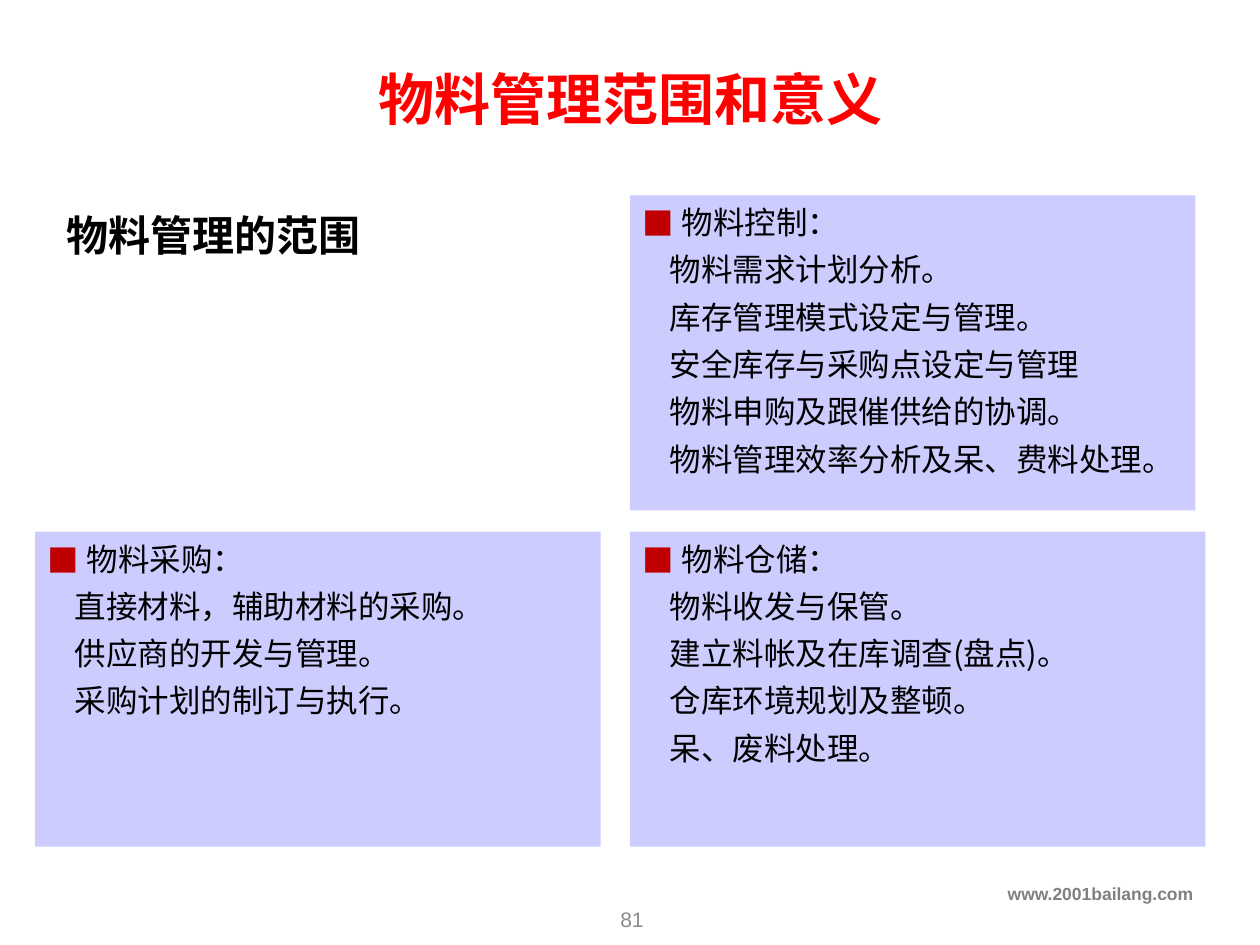
from lxml.etree import SubElement
from pptx import Presentation
from pptx.dml.color import RGBColor
from pptx.enum.shapes import MSO_SHAPE
from pptx.enum.text import MSO_ANCHOR, PP_ALIGN
from pptx.oxml.ns import qn
from pptx.util import Cm, Pt

RED = RGBColor(0xFF, 0x00, 0x00)
DARK_RED = RGBColor(0xC0, 0x00, 0x00)
LAVENDER = RGBColor(0xCC, 0xCC, 0xFF)
BLACK = RGBColor(0x00, 0x00, 0x00)
GRAY = RGBColor(0x80, 0x80, 0x80)
LIGHT_GRAY = RGBColor(0x8C, 0x8C, 0x8C)
LATIN, CJK = "Arial", "Noto Sans CJK SC"


class SlideBuilder:
    def __init__(self, slide):
        self.slide = slide

    def style(self, paragraph, size, color, font=CJK, bold=False):
        paragraph.font.size = Pt(size)
        paragraph.font.name = font
        paragraph.font.bold = bold
        paragraph.font.color.rgb = color
        for run in paragraph.runs:
            SubElement(run._r.get_or_add_rPr(), qn("a:ea"), typeface=CJK)

    def label(self, text, left, top, width, height, size, color, font=LATIN,
              bold=False, align=PP_ALIGN.LEFT, anchor=MSO_ANCHOR.MIDDLE):
        box = self.slide.shapes.add_textbox(Cm(left), Cm(top), Cm(width), Cm(height))
        frame = box.text_frame
        frame.word_wrap = True
        frame.vertical_anchor = anchor
        paragraph = frame.paragraphs[0]
        paragraph.text = text
        paragraph.alignment = align
        self.style(paragraph, size, color, font, bold)

    def indent(self, paragraph, left, first=0.0):
        properties = paragraph._p.get_or_add_pPr()
        properties.set("marL", str(Cm(left)))
        properties.set("indent", str(Cm(first)))
        return properties

    def bullet(self, paragraph):
        properties = self.indent(paragraph, 0.79, -0.79)
        color = SubElement(properties, qn("a:buClr"))
        SubElement(color, qn("a:srgbClr"), val=str(DARK_RED))
        SubElement(properties, qn("a:buFont"), typeface=CJK)
        SubElement(properties, qn("a:buChar"), char="■")

    def panel(self, heading, items, left, top, width, height=6.35):
        box = self.slide.shapes.add_shape(
            MSO_SHAPE.RECTANGLE, Cm(left), Cm(top), Cm(width), Cm(height))
        box.shadow.inherit = False
        box.fill.solid()
        box.fill.fore_color.rgb = LAVENDER
        box.line.fill.background()
        frame = box.text_frame
        frame.word_wrap = True
        frame.vertical_anchor = MSO_ANCHOR.TOP
        for row, text in enumerate([heading, *items]):
            paragraph = frame.add_paragraph() if row else frame.paragraphs[0]
            paragraph.text = text
            paragraph.alignment = PP_ALIGN.LEFT
            paragraph.line_spacing = Pt(22.5)
            if row:
                paragraph.space_before = Pt(4.5)
                self.indent(paragraph, 0.55)
            else:
                self.bullet(paragraph)
            self.style(paragraph, 18, BLACK)


def main():
    deck = Presentation()
    deck.slide_width, deck.slide_height = Cm(25.4), Cm(19.05)
    builder = SlideBuilder(deck.slides.add_slide(deck.slide_layouts[6]))

    # Footer
    builder.label("www.2001bailang.com", 0, 17.68, 24.3, 0.89, 10, GRAY, bold=True,
                  align=PP_ALIGN.RIGHT, anchor=MSO_ANCHOR.TOP)
    builder.label("81", 9.88, 18.01, 5.72, 1.02, 12, LIGHT_GRAY,
                  align=PP_ALIGN.CENTER)

    # Title and section heading
    builder.label("物料管理范围和意义", 7.11, 1.27, 11.2, 1.4, 32, RED, bold=True,
                  align=PP_ALIGN.CENTER)
    builder.label("物料管理的范围", 1.09, 3.94, 10.03, 1.6, 24, BLACK, CJK, bold=True)

    # Panels for the three areas
    left_column, right_column = 0.71, 12.7
    upper_row, lower_row = 3.94, 10.72
    builder.panel("物料控制：", [
        "物料需求计划分析。",
        "库存管理模式设定与管理。",
        "安全库存与采购点设定与管理",
        "物料申购及跟催供给的协调。",
        "物料管理效率分析及呆、费料处理。",
    ], right_column, upper_row, 11.4)
    builder.panel("物料采购：", [
        "直接材料，辅助材料的采购。",
        "供应商的开发与管理。",
        "采购计划的制订与执行。",
    ], left_column, lower_row, 11.4)
    builder.panel("物料仓储：", [
        "物料收发与保管。",
        "建立料帐及在库调查(盘点)。",
        "仓库环境规划及整顿。",
        "呆、废料处理。",
    ], right_column, lower_row, 11.6)

    deck.save("out.pptx")


if __name__ == "__main__":
    main()
